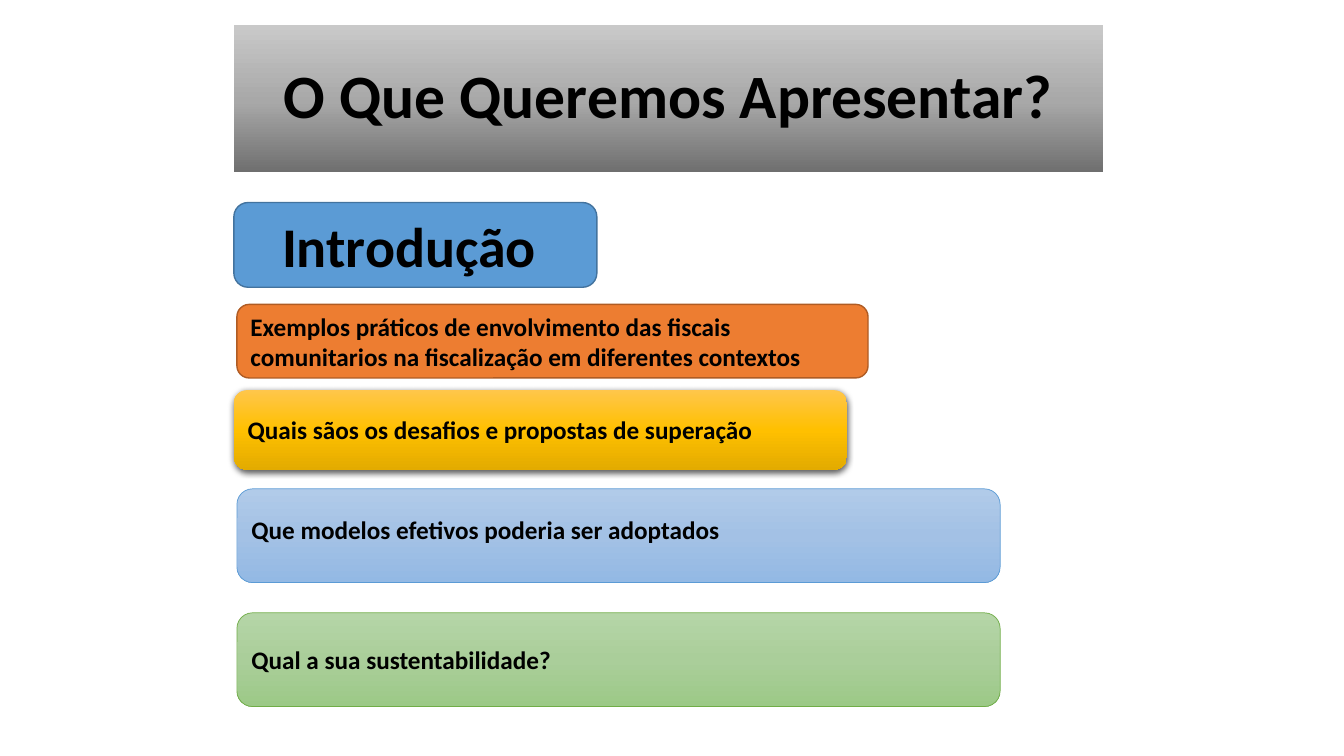
import pptx
import pptx.util
import pptx.dml.color
import pptx.enum.shapes
import pptx.enum.text
import pptx.oxml
import pptx.oxml.ns
from pptx.util import Inches

RGBColor = pptx.dml.color.RGBColor
ALIGN = pptx.enum.text.PP_ALIGN
qn = pptx.oxml.ns.qn

BLACK = RGBColor(0x00, 0x00, 0x00)
BLUE = RGBColor(0x5B, 0x9B, 0xD5)
BLUE_EDGE = RGBColor(0x43, 0x73, 0x9E)
ORANGE = RGBColor(0xED, 0x7D, 0x31)
ORANGE_EDGE = RGBColor(0xAF, 0x5C, 0x24)
GREEN = RGBColor(0x70, 0xAD, 0x47)
# Gradients run from top to bottom
GREYS = ((0, RGBColor(0xC9, 0xC9, 0xC9)), (52, RGBColor(0xA8, 0xA8, 0xA8)),
         (100, RGBColor(0x6F, 0x6F, 0x6F)))
GOLDS = ((0, RGBColor(0xFF, 0xC6, 0x4B)), (50, RGBColor(0xFF, 0xC0, 0x00)),
         (100, RGBColor(0xE3, 0xAB, 0x00)))
LIGHT_BLUES = ((0, RGBColor(0xB1, 0xCB, 0xE9)), (50, RGBColor(0xA3, 0xC1, 0xE5)),
               (100, RGBColor(0x93, 0xB9, 0xE4)))
LIGHT_GREENS = ((0, RGBColor(0xB5, 0xD5, 0xA7)), (50, RGBColor(0xAA, 0xCE, 0x9A)),
                (100, RGBColor(0x9C, 0xC9, 0x87)))


def set_fill(shape, fill):
    """Fill with one colour, or with a vertical gradient of (percent, colour) stops."""
    shape.fill.solid()
    if isinstance(fill, RGBColor):
        shape.fill.fore_color.rgb = fill
        return
    stops = "".join(f'<a:gs pos="{percent * 1000}"><a:srgbClr val="{colour}"/></a:gs>'
                    for percent, colour in fill)
    gradient = pptx.oxml.parse_xml(
        f'<a:gradFill {pptx.oxml.ns.nsdecls("a")} rotWithShape="1">'
        f'<a:gsLst>{stops}</a:gsLst><a:lin ang="5400000" scaled="0"/></a:gradFill>')
    properties = shape.element.spPr
    properties.replace(properties.find(qn("a:solidFill")), gradient)


def set_text(shape, text, size, alignment):
    text_frame = shape.text_frame
    text_frame.text = text
    text_frame.word_wrap = True
    text_frame.vertical_anchor = pptx.enum.text.MSO_ANCHOR.MIDDLE
    paragraph = text_frame.paragraphs[0]
    paragraph.alignment = alignment
    font = paragraph.runs[0].font
    font.name, font.size, font.bold = "Calibri", pptx.util.Pt(size), True
    font.color.rgb = BLACK


def set_title(slide, text):
    title = slide.shapes.title
    title.left, title.top = Inches(2.32), Inches(0.25)
    title.width, title.height = Inches(8.62), Inches(1.46)
    set_fill(title, GREYS)
    set_text(title, text, 44, ALIGN.CENTER)
    title.text_frame.paragraphs[0].line_spacing = 0.9


def add_box(slide, text, left, top, width, height, fill, edge=None, edge_width=1,
            size=18, alignment=ALIGN.LEFT):
    box = slide.shapes.add_shape(
        pptx.enum.shapes.MSO_SHAPE.ROUNDED_RECTANGLE,
        Inches(left), Inches(top), Inches(width), Inches(height))
    box.shadow.inherit = False
    set_fill(box, fill)
    if edge is None:
        box.line.fill.background()
    else:
        box.line.color.rgb = edge
        box.line.width = pptx.util.Pt(edge_width)
    set_text(box, text, size, alignment)
    return box


def add_shadow(shape):
    shape.element.spPr.find(qn("a:effectLst")).append(pptx.oxml.parse_xml(
        f'<a:outerShdw {pptx.oxml.ns.nsdecls("a")} blurRad="57150" dist="19050" '
        'dir="5400000" algn="ctr" rotWithShape="0"><a:srgbClr val="000000">'
        '<a:alpha val="63000"/></a:srgbClr></a:outerShdw>'))


def main():
    presentation = pptx.Presentation()
    presentation.slide_width = Inches(13.33)
    presentation.slide_height = Inches(7.5)
    slide = presentation.slides.add_slide(presentation.slide_layouts[5])

    # Heading and introduction
    set_title(slide, "O Que Queremos Apresentar?")
    add_box(slide, "Introdução ", 2.32, 2.01, 3.6, 0.84, BLUE, BLUE_EDGE,
            size=40, alignment=ALIGN.CENTER)

    # Topics
    add_box(slide, "Exemplos práticos de envolvimento das fiscais comunitarios "
            "na fiscalização em diferentes contextos",
            2.35, 3.02, 6.26, 0.73, ORANGE, ORANGE_EDGE)
    challenges = add_box(slide, "Quais sãos os desafios e propostas de superação",
                         2.32, 3.87, 6.08, 0.79, GOLDS)
    add_shadow(challenges)
    models = add_box(slide, "Que modelos efetivos poderia ser adoptados",
                     2.35, 4.85, 7.57, 0.93, LIGHT_BLUES, BLUE, 0.5)
    models.text_frame.margin_bottom = Inches(0.18)  # text sits above the middle
    add_box(slide, "Qual a sua sustentabilidade?",
            2.35, 6.08, 7.57, 0.93, LIGHT_GREENS, GREEN, 0.5)

    presentation.save("out.pptx")


if __name__ == "__main__":
    main()
